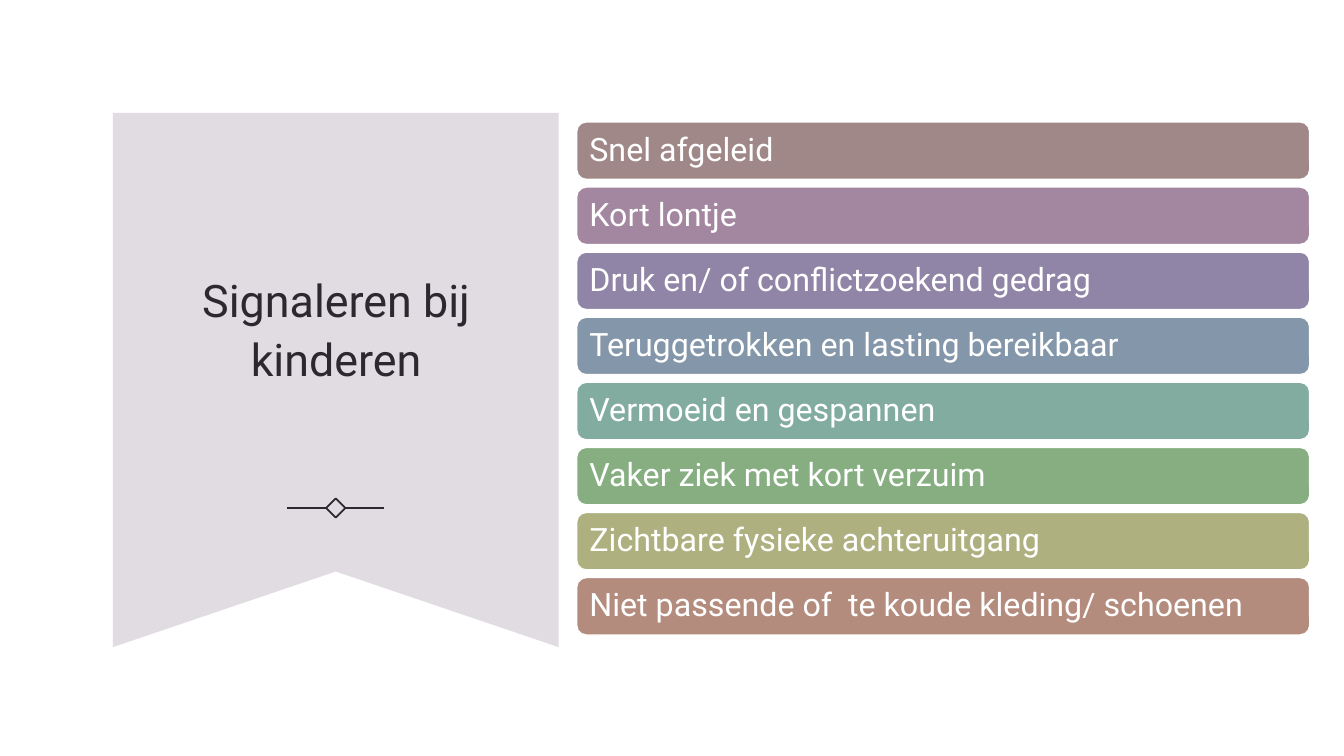
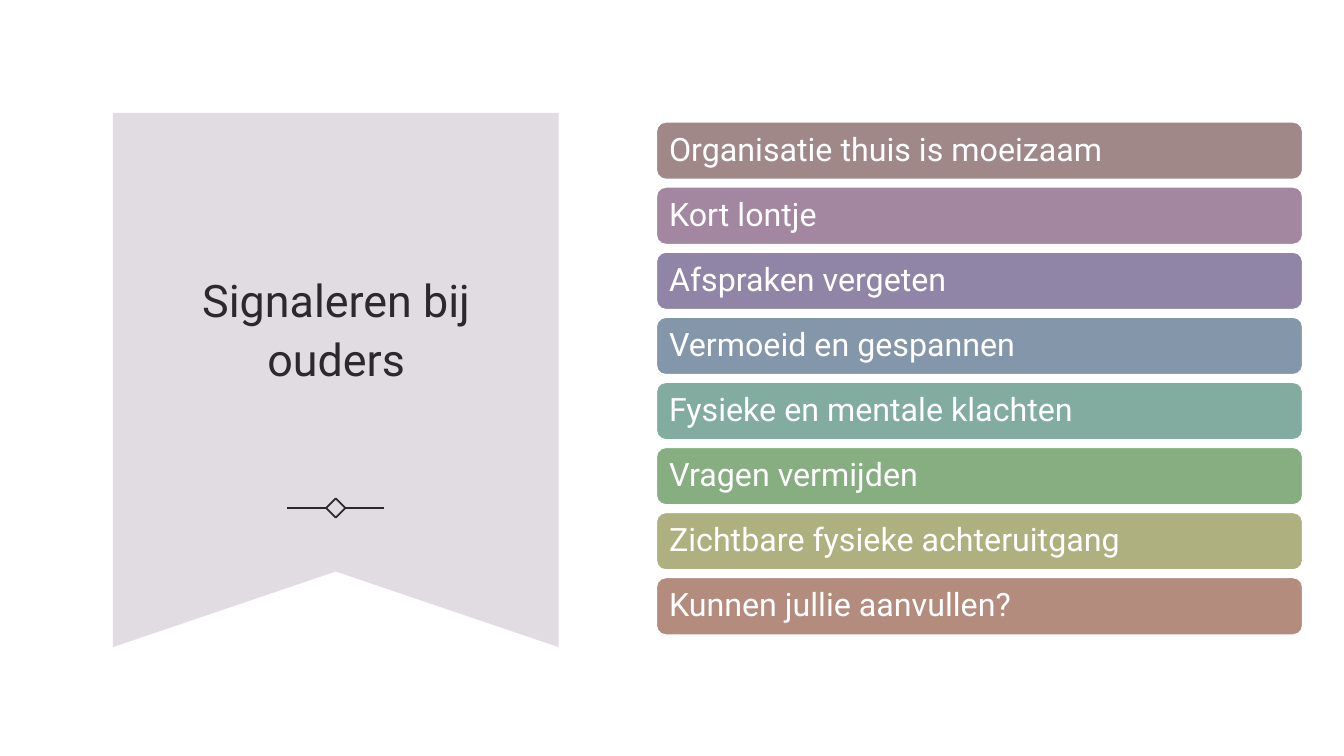
from pptx import Presentation
from pptx.dml.color import RGBColor
from pptx.enum.shapes import MSO_CONNECTOR, MSO_SHAPE
from pptx.enum.text import MSO_ANCHOR, MSO_AUTO_SIZE, PP_ALIGN
from pptx.oxml import parse_xml
from pptx.oxml.ns import nsdecls
from pptx.util import Inches, Pt

FONT = "Roboto"
INK, PAPER, RIBBON = "2C2830", "FFFFFF", "E0DCE1"
BAR_COLOURS = ["A08889", "A3869F", "9085A6", "8496A9",
               "82AC9F", "86AE81", "AEB17F", "B48C7E"]

# Per slide: title, left edge and width of the bars, signals
TOPICS = [
    ("Signaleren bij kinderen", 5.72, 7.27, [
        "Snel afgeleid",
        "Kort lontje",
        "Druk en/ of conflictzoekend gedrag",
        "Teruggetrokken en lasting bereikbaar",
        "Vermoeid en gespannen",
        "Vaker ziek met kort verzuim",
        "Zichtbare fysieke achteruitgang",
        "Niet passende of  te koude kleding/ schoenen",
    ]),
    ("Signaleren bij ouders", 6.51, 6.41, [
        "Organisatie thuis is moeizaam",
        "Kort lontje",
        "Afspraken vergeten",
        "Vermoeid en gespannen",
        "Fysieke en mentale klachten",
        "Vragen vermijden",
        "Zichtbare fysieke achteruitgang",
        "Kunnen jullie aanvullen?",
    ]),
]

# Ribbon, ornament and bar grid, in inches
RIBBON_LEFT, RIBBON_TOP, RIBBON_RIGHT, RIBBON_BOTTOM = 1.12, 1.12, 5.54, 6.42
RIBBON_MIDDLE = (RIBBON_LEFT + RIBBON_RIGHT) / 2
NOTCH = 0.75
ORNAMENT_Y, ORNAMENT_REACH, DIAMOND = 5.04, 0.48, 0.19
BARS_TOP, LAST_BAR_TOP, BAR_HEIGHT = 1.21, 5.73, 0.57
BAR_PITCH = (LAST_BAR_TOP - BARS_TOP) / (len(BAR_COLOURS) - 1)


def colour(hex_string):
    return RGBColor.from_string(hex_string)


def add_text(frame, text, size, hex_string, align, spacing):
    frame.word_wrap = True
    frame.auto_size = MSO_AUTO_SIZE.NONE
    frame.vertical_anchor = MSO_ANCHOR.MIDDLE
    paragraph = frame.paragraphs[0]
    paragraph.alignment = align
    paragraph.line_spacing = spacing
    paragraph.space_before = Pt(0)
    run = paragraph.add_run()
    run.text = text
    run.font.name = FONT
    run.font.size = Pt(size)
    run.font.color.rgb = colour(hex_string)


prs = Presentation()
prs.slide_width, prs.slide_height = Inches(13.33), Inches(7.5)
background = prs.slide_master.background.fill
background.solid()
background.fore_color.rgb = colour(PAPER)

layout = prs.slide_layouts[5]
for placeholder in list(layout.placeholders)[1:]:
    placeholder.element.getparent().remove(placeholder.element)
slides = [prs.slides.add_slide(layout) for topic in TOPICS]

# Shared ribbon with a notched lower edge
canvas = slides[0].shapes
outline = canvas.build_freeform(Inches(RIBBON_LEFT), Inches(RIBBON_TOP))
outline.add_line_segments([(Inches(x), Inches(y)) for x, y in [
    (RIBBON_RIGHT, RIBBON_TOP),
    (RIBBON_RIGHT, RIBBON_BOTTOM),
    (RIBBON_MIDDLE, RIBBON_BOTTOM - NOTCH),
    (RIBBON_LEFT, RIBBON_BOTTOM),
]])
ribbon = outline.convert_to_shape()
ribbon.shadow.inherit = False
ribbon.fill.solid()
ribbon.fill.fore_color.rgb = colour(RIBBON)
ribbon.line.fill.background()

# Shared ornament: a diamond between two lines
diamond = canvas.add_shape(
    MSO_SHAPE.DIAMOND, Inches(RIBBON_MIDDLE - DIAMOND / 2),
    Inches(ORNAMENT_Y - DIAMOND / 2), Inches(DIAMOND), Inches(DIAMOND))
diamond.shadow.inherit = False
diamond.fill.background()
ornament = [diamond]
for direction, site in [(-1, 1), (1, 3)]:
    arm = canvas.add_connector(
        MSO_CONNECTOR.STRAIGHT, Inches(RIBBON_MIDDLE), Inches(ORNAMENT_Y),
        Inches(RIBBON_MIDDLE + direction * ORNAMENT_REACH), Inches(ORNAMENT_Y))
    arm.begin_connect(diamond, site)
    ornament.append(arm)
for part in ornament:
    part.line.color.rgb = colour(INK)
    part.line.width = Pt(1.25)
for arm in ornament[1:]:
    arm.element.spPr.append(parse_xml(f"<a:effectLst {nsdecls('a')}/>"))

# The layout carries the shared parts, behind every title
for part in [ribbon] + ornament:
    layout.shapes.element.append(part.element)

for slide, (heading, bars_left, bar_width, signals) in zip(slides, TOPICS):
    # Title on the ribbon
    title = slide.shapes.title
    title.left, title.top = Inches(1.56), Inches(1.81)
    title.width, title.height = Inches(3.55), Inches(2.85)
    add_text(title.text_frame, heading, 32, INK, PP_ALIGN.CENTER, 1.1)

    # One bar per signal
    for row, (signal, bar_colour) in enumerate(zip(signals, BAR_COLOURS)):
        bar = slide.shapes.add_shape(
            MSO_SHAPE.ROUNDED_RECTANGLE, Inches(bars_left),
            Inches(BARS_TOP + row * BAR_PITCH), Inches(bar_width), Inches(BAR_HEIGHT))
        bar.shadow.inherit = False
        bar.fill.solid()
        bar.fill.fore_color.rgb = colour(bar_colour)
        bar.line.color.rgb = colour(PAPER)
        bar.line.width = Pt(1)
        bar.text_frame.margin_left = bar.text_frame.margin_right = Inches(0.1)
        add_text(bar.text_frame, signal, 23, PAPER, PP_ALIGN.LEFT, 0.9)

prs.save("out.pptx")
